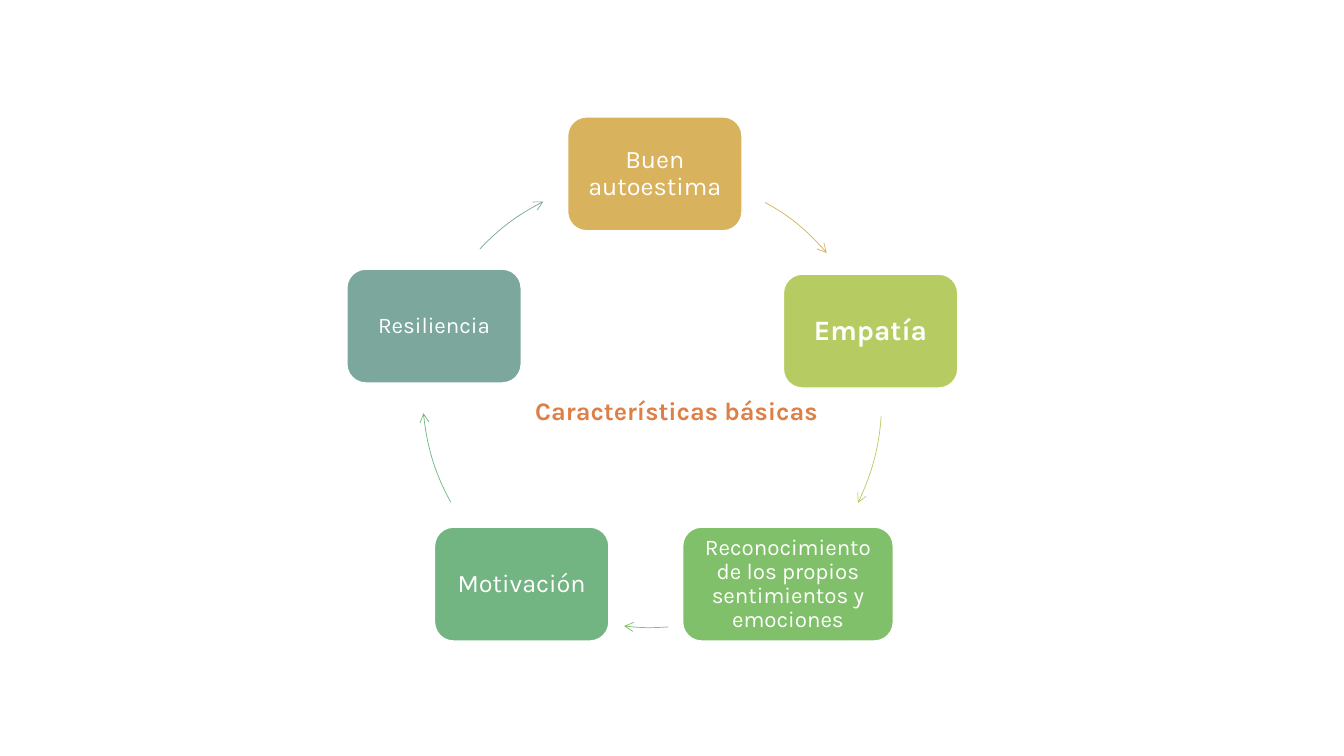
from lxml import etree
from pptx import Presentation
from pptx.dml.color import RGBColor
from pptx.enum.shapes import MSO_SHAPE as Shape
from pptx.enum.text import MSO_ANCHOR as Anchor, PP_ALIGN as Align
from pptx.oxml.ns import qn
from pptx.util import Inches, Pt

FONT = "Karla"
WIDE, HIGH, RING = 1.73, 1.13, 4.5
STEPS = [
    ("Buen autoestima", "D8B25C", 18, False, (2.19, 0, WIDE), (0.81, 0.57),
     [(4.15, 0.85), (4.39, 0.98), (4.59, 1.15), (4.76, 1.35)]),
    ("Empatía", "B6CC63", 20, True, (4.33, 1.56, WIDE), (0.81, 0.57),
     [(5.3, 2.97), (5.28, 3.27), (5.2, 3.56), (5.07, 3.83)]),
    ("Reconocimiento de los propios sentimientos y emociones", "81C06B", 16,
     False, (3.33, 4.07, 2.09), (0.81, 0.57),
     [(3.19, 5.06), (3.04, 5.07), (2.89, 5.07), (2.75, 5.05)]),
    ("Motivación", "73B483", 18, False, (0.87, 4.07, WIDE), (0.75, 0.49),
     [(1.03, 3.82), (0.88, 3.55), (0.79, 3.25), (0.76, 2.94)]),
    ("Resiliencia", "7BA79D", 16, False, (0, 1.51, WIDE), (0.71, 0.61),
     [(1.32, 1.31), (1.5, 1.12), (1.71, 0.96), (1.95, 0.84)]),
]


def tint(code):
    """Turn a hex string into a colour."""
    return RGBColor.from_string(code)


def write(shape, text, size, color, bold, align, inset):
    """Set one styled paragraph, centred in height, in a shape."""
    frame = shape.text_frame
    frame.word_wrap = True
    frame.vertical_anchor = Anchor.MIDDLE
    frame.margin_left = frame.margin_right = Inches(inset)
    frame.margin_top = frame.margin_bottom = Inches(inset)
    para = frame.paragraphs[0]
    para.text = text
    para.alignment = align
    para.line_spacing = 0.9
    font = para.font
    font.name, font.size, font.bold = FONT, Pt(size), bold
    font.color.rgb = tint(color)


def add_card(slide, left, top, width, text, color, size, bold):
    """Place one rounded step card."""
    card = slide.shapes.add_shape(
        Shape.ROUNDED_RECTANGLE, Inches(left), Inches(top),
        Inches(width), Inches(HIGH))
    card.shadow.inherit = False
    card.fill.solid()
    card.fill.fore_color.rgb = tint(color)
    card.line.color.rgb = tint("FFFFFF")
    card.line.width = Pt(1)
    write(card, text, size, "FFFFFF", bold, Align.CENTER, 0.07)


def add_curve(slide, left, top, points, color):
    """Draw a Bezier arrow inside the square frame of its ring."""
    spots = [(Inches(x), Inches(y)) for x, y in points]
    pen = slide.shapes.build_freeform(*spots[0])
    pen.add_line_segments(spots[1:], close=False)
    curve = pen.convert_to_shape()
    curve.shadow.inherit = False
    curve.fill.background()
    curve.line.color.rgb = tint(color)
    curve.line.width = Pt(0.5)
    route = next(curve.element.iter(qn("a:path")))
    bend = etree.SubElement(route, qn("a:cubicBezTo"))
    for part in route.findall(qn("a:lnTo")):
        bend.append(part[0])
        route.remove(part)
    for spot, (x, y) in zip(route.iter(qn("a:pt")), spots):
        spot.set("x", str(x - Inches(left)))
        spot.set("y", str(y - Inches(top)))
    side = Inches(RING)
    route.set("w", str(side))
    route.set("h", str(side))
    curve.left, curve.top = Inches(left), Inches(top)
    curve.width = curve.height = side
    line = curve.element.spPr.find(qn("a:ln"))
    etree.SubElement(line, qn("a:tailEnd"), type="arrow")


def add_cycle(slide, left, top):
    """Place the ring of cards and arrows from its top left corner."""
    for text, color, size, bold, (x, y, width), (dx, dy), points in STEPS:
        add_card(slide, left + x, top + y, width, text, color, size, bold)
        track = [(left + px, top + py) for px, py in points]
        add_curve(slide, left + dx, top + dy, track, color)


def add_title(slide, left, top, width, height):
    """Place the title in the middle of the ring."""
    box = slide.shapes.add_textbox(
        Inches(left), Inches(top), Inches(width), Inches(height))
    write(box, "Características básicas", 18, "DD8047", True, Align.LEFT, 0.1)


def main():
    """Build and save the slide."""
    deck = Presentation()
    deck.slide_width, deck.slide_height = Inches(13.33), Inches(7.5)
    slide = deck.slides.add_slide(deck.slide_layouts[6])
    add_title(slide, 5.21, 3.23, 3.38, 1.72)
    add_cycle(slide, 3.44, 1.16)
    deck.save("out.pptx")


if __name__ == "__main__":
    main()
